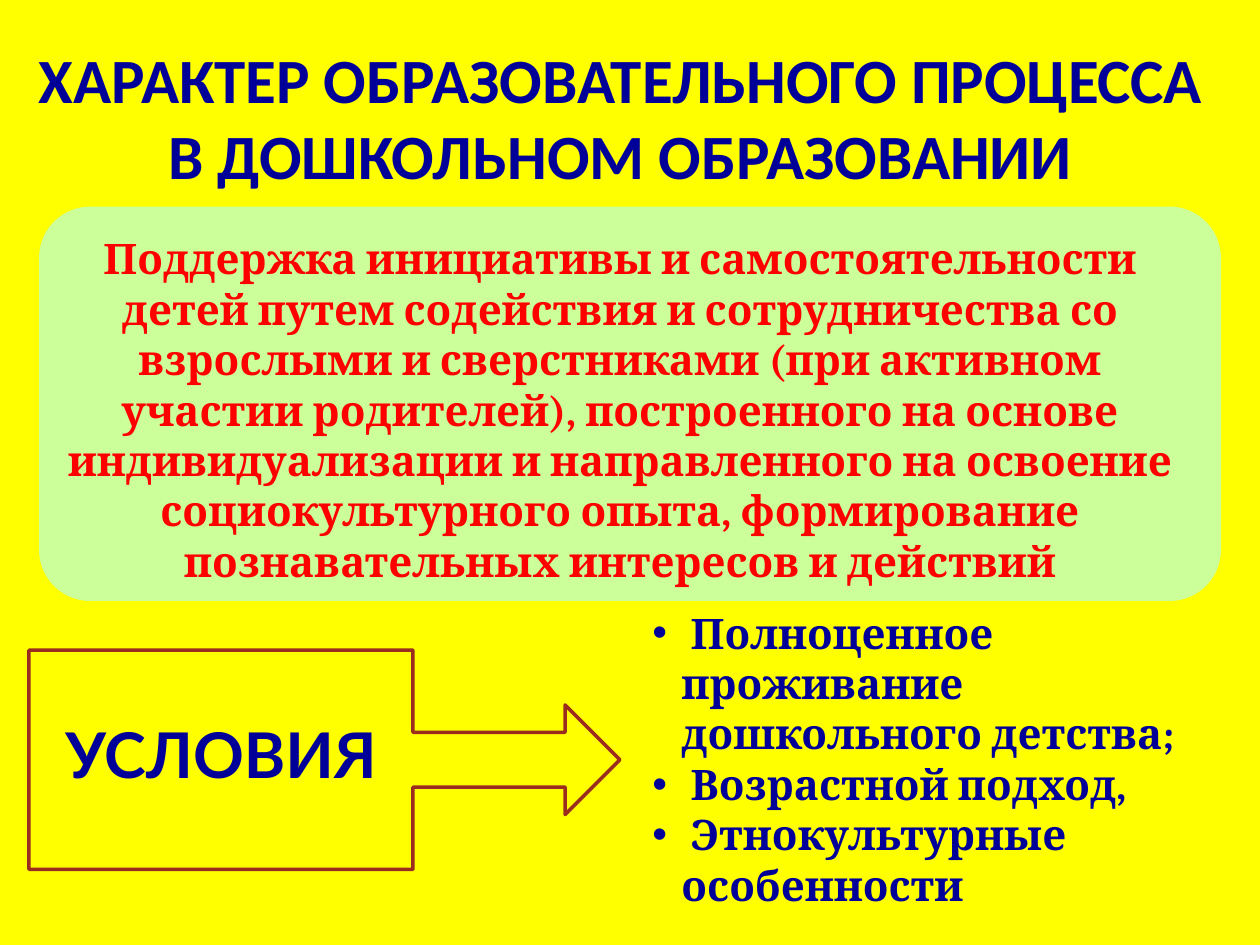
from pptx import Presentation
from pptx.dml.color import RGBColor
from pptx.enum import shapes, text
from pptx.oxml import parse_xml
from pptx.oxml.ns import nsdecls
from pptx.util import Inches, Pt

# Content
TITLE = "ХАРАКТЕР ОБРАЗОВАТЕЛЬНОГО ПРОЦЕССА В ДОШКОЛЬНОМ ОБРАЗОВАНИИ"
SUPPORT = (
    "Поддержка инициативы и самостоятельности детей путем содействия "
    "и сотрудничества со взрослыми и сверстниками (при активном участии "
    "родителей), построенного на основе индивидуализации и направленного "
    "на освоение социокультурного опыта, формирование познавательных "
    "интересов и действий"
)
LABEL = "УСЛОВИЯ"
TERMS = [
    " Полноценное проживание дошкольного детства;",
    " Возрастной подход,",
    " Этнокультурные особенности",
]
NAVY, RED, GREEN, YELLOW, BROWN = "000099", "FF0000", "CCFF99", "FFFF00", "9B2D1F"


def color(code):
    return RGBColor.from_string(code)


def place(box):
    return [Inches(n) for n in box]


def write(shape, lines, size, font, code, align, anchor=text.MSO_ANCHOR.TOP):
    frame = shape.text_frame
    frame.word_wrap = True
    frame.auto_size = text.MSO_AUTO_SIZE.NONE
    frame.vertical_anchor = anchor
    for i, line in enumerate(lines):
        para = frame.add_paragraph() if i else frame.paragraphs[0]
        para.alignment = align
        para.line_spacing = 1.0
        para.space_before = para.space_after = Pt(0)
        run = para.add_run()
        run.text = line
        run.font.size = Pt(size)
        run.font.name = font
        run.font.bold = True
        run.font.color.rgb = color(code)
    return frame


def bullet(para, indent):
    props = para._p.get_or_add_pPr()
    props.set("marL", str(indent))
    props.set("indent", str(-indent))
    props.append(parse_xml(f'<a:buFont {nsdecls("a")} typeface="Arial"/>'))
    props.append(parse_xml(f'<a:buChar {nsdecls("a")} char="•"/>'))


deck = Presentation()
deck.slide_width, deck.slide_height = Inches(10), Inches(7.5)
slide = deck.slides.add_slide(deck.slide_layouts[5])
slide.background.fill.solid()
slide.background.fill.fore_color.rgb = color(YELLOW)
center, left = text.PP_ALIGN.CENTER, text.PP_ALIGN.LEFT

# Title
title = slide.shapes.title
title.left, title.top, title.width, title.height = place((0.16, 0.3, 9.53, 1.25))
write(title, [TITLE], 36, "Calibri", NAVY, center, text.MSO_ANCHOR.MIDDLE)

# Green panel with the main statement
panel = slide.shapes.add_shape(
    shapes.MSO_SHAPE.ROUNDED_RECTANGLE, *place((0.31, 1.64, 9.38, 3.13)))
panel.adjustments[0] = 0.13
panel.shadow.inherit = False
panel.fill.solid()
panel.fill.fore_color.rgb = color(GREEN)
panel.line.fill.background()
support = slide.shapes.add_textbox(*place((0.39, 1.8, 9.06, 2.93)))
write(support, [SUPPORT], 24, "Cambria", RED, center)

# Bulleted conditions
terms = slide.shapes.add_textbox(*place((5.08, 4.77, 4.61, 2.93)))
for para in write(terms, TERMS, 24, "Cambria", NAVY, left).paragraphs:
    bullet(para, Inches(0.23))

# Arrow callout and its label
arrow = slide.shapes.add_shape(
    shapes.MSO_SHAPE.RIGHT_ARROW_CALLOUT, *place((0.23, 5.16, 4.69, 1.74)))
arrow.shadow.inherit = False
arrow.fill.background()
arrow.line.color.rgb = color(BROWN)
arrow.line.width = Pt(2)
label = slide.shapes.add_textbox(*place((0.31, 5.63, 2.89, 0.71)))
write(label, [LABEL], 36, "Lato", NAVY, center)

deck.save("out.pptx")
